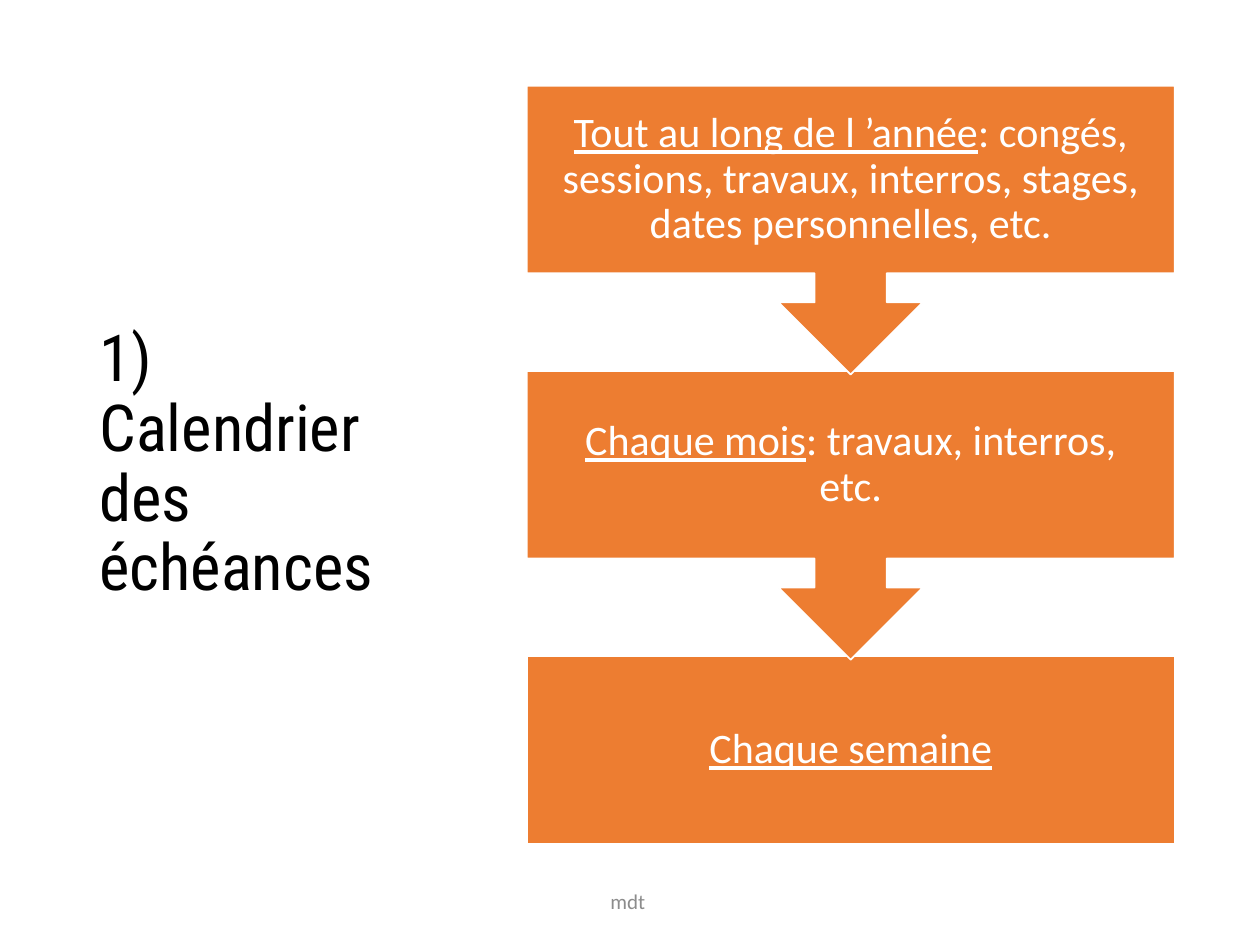
from dataclasses import dataclass

from pptx import Presentation
from pptx.dml.color import RGBColor
from pptx.enum.shapes import MSO_SHAPE
from pptx.enum.text import MSO_ANCHOR, MSO_AUTO_SIZE, PP_ALIGN
from pptx.util import Cm, Pt

RECT = MSO_SHAPE.RECTANGLE
CALLOUT = MSO_SHAPE.DOWN_ARROW_CALLOUT
MIDDLE = MSO_ANCHOR.MIDDLE
LEFT, CENTER = PP_ALIGN.LEFT, PP_ALIGN.CENTER
FIXED = MSO_AUTO_SIZE.NONE


@dataclass(frozen=True)
class Theme:
    head: str = "Roboto Condensed"
    body: str = "Calibri"
    black: RGBColor = RGBColor(0, 0, 0)
    white: RGBColor = RGBColor(255, 255, 255)
    gray: RGBColor = RGBColor(0x8C, 0x8C, 0x8C)
    orange: RGBColor = RGBColor(0xED, 0x7D, 0x31)
    title: int = 37
    step: int = 24
    foot: int = 12


@dataclass(frozen=True)
class Step:
    label: str
    rest: str = ""


THEME = Theme()
STEPS = [
    Step("Tout au long de l ’année",
         ": congés, sessions, travaux, interros, stages, dates personnelles, etc."),
    Step("Chaque mois", ": travaux, interros, etc."),
    Step("Chaque semaine"),
]

# Column of steps, in centimetres
X, TOP, WIDTH = 10.62, 1.73, 13.06
BOX, TALL, PITCH = 3.78, 5.82, 5.75
INSET = Cm(0.48)


def style(para, name: str, size: int, color: RGBColor, align) -> None:
    para.alignment = align
    para.font.name = name
    para.font.size = Pt(size)
    para.font.color.rgb = color


def setup(frame) -> None:
    frame.word_wrap = True
    frame.auto_size = FIXED
    frame.vertical_anchor = MIDDLE


def add_title(slide, text: str) -> None:
    title = slide.shapes.title
    title.left, title.top = Cm(1.75), Cm(TOP)
    title.width, title.height = Cm(7.04), Cm(15.29)
    setup(title.text_frame)
    para = title.text_frame.paragraphs[0]
    para.text = text
    para.line_spacing = 0.9
    style(para, THEME.head, THEME.title, THEME.black, LEFT)


def add_foot(slide, text: str) -> None:
    box = slide.shapes.add_textbox(Cm(8.41), Cm(17.65), Cm(8.59), Cm(1.02))
    setup(box.text_frame)
    para = box.text_frame.paragraphs[0]
    para.text = text
    para.space_after = Pt(6)
    style(para, THEME.body, THEME.foot, THEME.gray, CENTER)


def add_step(slide, step: Step, row: int, last: bool) -> None:
    kind, height = (RECT, BOX) if last else (CALLOUT, TALL)
    shape = slide.shapes.add_shape(
        kind, Cm(X), Cm(TOP + row * PITCH), Cm(WIDTH), Cm(height))
    shape.shadow.inherit = False
    shape.fill.solid()
    shape.fill.fore_color.rgb = THEME.orange
    shape.line.color.rgb = THEME.white
    shape.line.width = Pt(1)

    frame = shape.text_frame
    setup(frame)
    frame.margin_left = frame.margin_right = INSET
    frame.margin_top = frame.margin_bottom = INSET
    para = frame.paragraphs[0]
    para.line_spacing = 0.9
    style(para, THEME.body, THEME.step, THEME.white, CENTER)
    label = para.add_run()
    label.text = step.label
    label.font.underline = True
    if step.rest:
        para.add_run().text = step.rest


def main() -> None:
    deck = Presentation()
    deck.slide_width, deck.slide_height = Cm(25.4), Cm(19.05)
    slide = deck.slides.add_slide(deck.slide_layouts[5])

    # Title and footer
    add_title(slide, "1) Calendrier des échéances")
    add_foot(slide, "mdt ")

    # Steps from the bottom up, so each arrow tip lies over the next box
    end = len(STEPS) - 1
    for row in range(end, -1, -1):
        add_step(slide, STEPS[row], row, row == end)

    deck.save("out.pptx")


if __name__ == "__main__":
    main()
